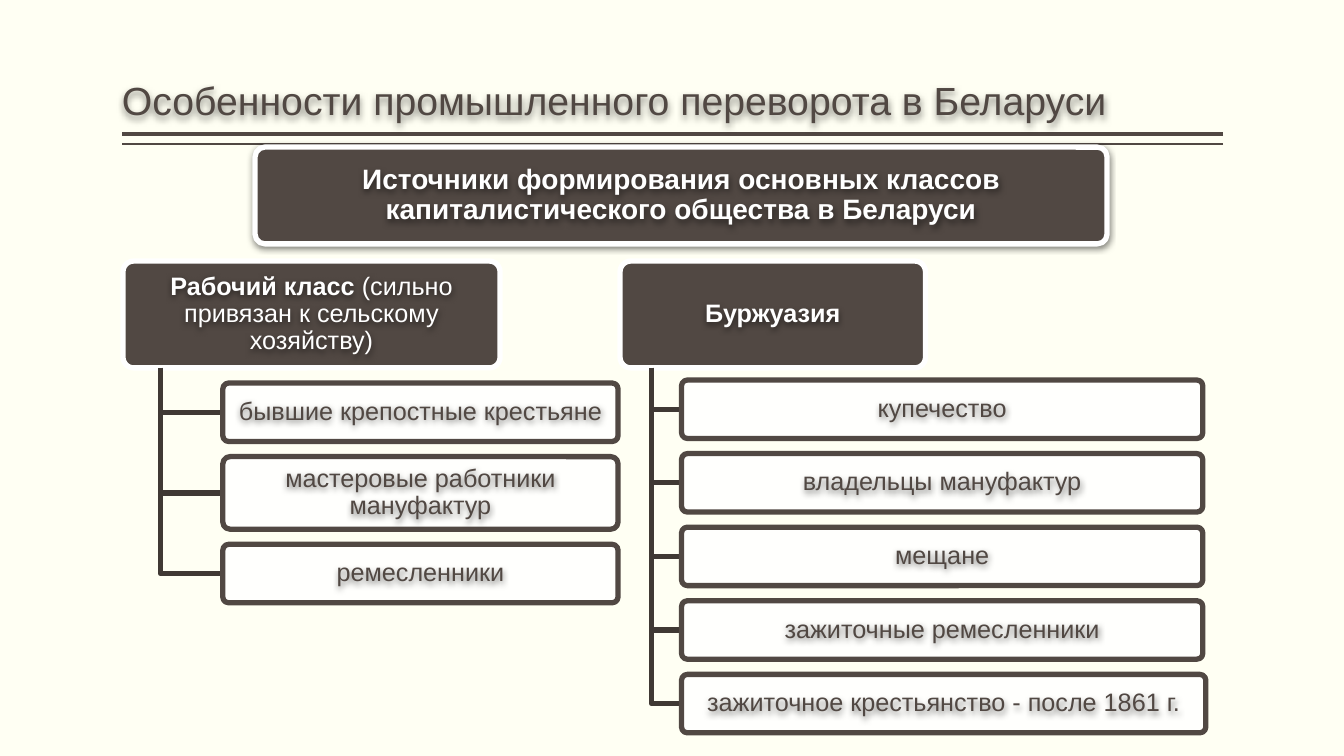
import pptx
import pptx.util
import pptx.dml.color
import pptx.enum.shapes
import pptx.enum.text
import pptx.oxml.ns
import lxml.etree

Inches = pptx.util.Inches
Pt = pptx.util.Pt
RGBColor = pptx.dml.color.RGBColor
Align = pptx.enum.text.PP_ALIGN
Anchor = pptx.enum.text.MSO_ANCHOR
Kind = pptx.enum.shapes.MSO_SHAPE
qn = pptx.oxml.ns.qn

CREAM = RGBColor(0xFF, 0xFF, 0xF3)
BROWN = RGBColor(0x51, 0x48, 0x43)
DARK = RGBColor(0x40, 0x39, 0x34)
WHITE = RGBColor(0xFF, 0xFF, 0xFF)

STROKE = 3.78
GAP = 0.15
HEAD_TOP, HEAD_H = 2.59, 1.06
ROW_H = 0.58


class Board:
    """Holds the slide and the style its elements share."""
    font = "Arial"

    def __init__(self, slide):
        self.slide = slide
        self.shapes = slide.shapes
        fill = slide.background.fill
        fill.solid()
        fill.fore_color.rgb = CREAM

    def shade(self, shape):
        """Give a shape a soft shadow straight below it."""
        shape.shadow.inherit = False
        effects = shape._element.spPr.find(qn("a:effectLst"))
        outer = lxml.etree.SubElement(
            effects, qn("a:outerShdw"), blurRad=str(Pt(4.5)),
            dist=str(Pt(1.5)), dir="5400000", rotWithShape="0")
        color = lxml.etree.SubElement(outer, qn("a:srgbClr"), val="000000")
        lxml.etree.SubElement(color, qn("a:alpha"), val="50000")

    def rule(self, y, width):
        line = self.shapes.add_connector(
            pptx.enum.shapes.MSO_CONNECTOR.STRAIGHT,
            Inches(12.13), Inches(y), Inches(1.21), Inches(y))
        line.line.color.rgb = BROWN
        line.line.width = Pt(width)
        lxml.etree.SubElement(line._element.spPr, qn("a:effectLst"))

    def text(self, x, y, w, h, runs, size, color, align=Align.CENTER,
             anchor=Anchor.MIDDLE, inset=(0.04, 0.02)):
        """Add a shaded text box; runs are pairs of wording and boldness."""
        box = self.shapes.add_textbox(
            Inches(x), Inches(y), Inches(w), Inches(h))
        self.shade(box)
        frame = box.text_frame
        frame.word_wrap = True
        frame.vertical_anchor = anchor
        frame.margin_left = frame.margin_right = Inches(inset[0])
        frame.margin_top = frame.margin_bottom = Inches(inset[1])
        para = frame.paragraphs[0]
        para.alignment = align
        para.line_spacing = 0.9
        for words, bold in runs:
            run = para.add_run()
            run.text = words
            font = run.font
            font.name = self.font
            font.size = Pt(size)
            font.bold = bold
            font.color.rgb = color

    def card(self, x, y, w, h, runs, size=18, dark=False, shadow=False):
        """Add a rounded box with its wording over it."""
        box = self.shapes.add_shape(
            Kind.ROUNDED_RECTANGLE, Inches(x), Inches(y), Inches(w), Inches(h))
        box.adjustments[0] = 0.1
        box.fill.solid()
        box.fill.fore_color.rgb = BROWN if dark else WHITE
        box.line.color.rgb = WHITE if dark else BROWN
        box.line.width = Pt(STROKE)
        if not dark:
            color = box._element.spPr.find(qn("a:solidFill"))[0]
            lxml.etree.SubElement(color, qn("a:alpha"), val="90000")
        if shadow:
            self.shade(box)
        else:
            box.shadow.inherit = False
        pad = 0.03 if dark else 0.02
        self.text(x + pad, y + pad, w - 2 * pad, h - 2 * pad, runs, size,
                  WHITE if dark else BROWN)

    def branch(self, x, top, end, y):
        """Draw a line down from a heading and across to a row."""
        form = self.shapes.build_freeform(Inches(x), Inches(top), scale=1.0)
        form.add_line_segments(
            [(Inches(x), Inches(y)), (Inches(end), Inches(y))], close=False)
        line = form.convert_to_shape()
        line.fill.background()
        line.line.color.rgb = DARK
        line.line.width = Pt(STROKE)
        line.shadow.inherit = False

    def tree(self, x, w, runs, stem, left, top, rows):
        """Add a heading and its rows of wording, width and height."""
        self.card(x, HEAD_TOP, w, HEAD_H, runs, dark=True)
        y = top
        for words, width, high in rows:
            self.branch(stem, HEAD_TOP + HEAD_H, left, y + high / 2)
            self.card(left, y, width, high, [(words, False)])
            y += high + GAP


def main():
    deck = pptx.Presentation()
    deck.slide_width = Inches(13.33)
    deck.slide_height = Inches(7.5)
    board = Board(deck.slides.add_slide(deck.slide_layouts[6]))

    board.rule(1.33, 3)
    board.rule(1.43, 1)
    board.text(1.21, 0.08, 10.92, 1.2,
               [("Особенности промышленного переворота в Беларуси", False)],
               28, BROWN, Align.LEFT, Anchor.BOTTOM, (0, 0.05))

    board.tree(1.22, 3.74,
               [("Рабочий класс ", True),
                ("(сильно привязан к сельскому хозяйству)", False)],
               1.59, 2.21, 3.8,
               [("бывшие крепостные крестьяне", 3.92, ROW_H),
                ("мастеровые работники мануфактур", 3.92, 0.72),
                ("ремесленники", 3.92, ROW_H)])
    board.tree(6.15, 3.03, [("Буржуазия", True)], 6.46, 6.76, 3.77,
               [("купечество", 5.17, ROW_H),
                ("владельцы мануфактур", 5.17, ROW_H),
                ("мещане", 5.17, ROW_H),
                ("зажиточные ремесленники", 5.17, ROW_H),
                ("зажиточное крестьянство - после 1861 г.", 5.2, ROW_H)])

    board.card(2.53, 1.46, 8.45, 0.96,
               [("Источники формирования основных классов "
                 "капиталистического общества в Беларуси", True)],
               size=20, dark=True, shadow=True)
    deck.save("out.pptx")


if __name__ == "__main__":
    main()
